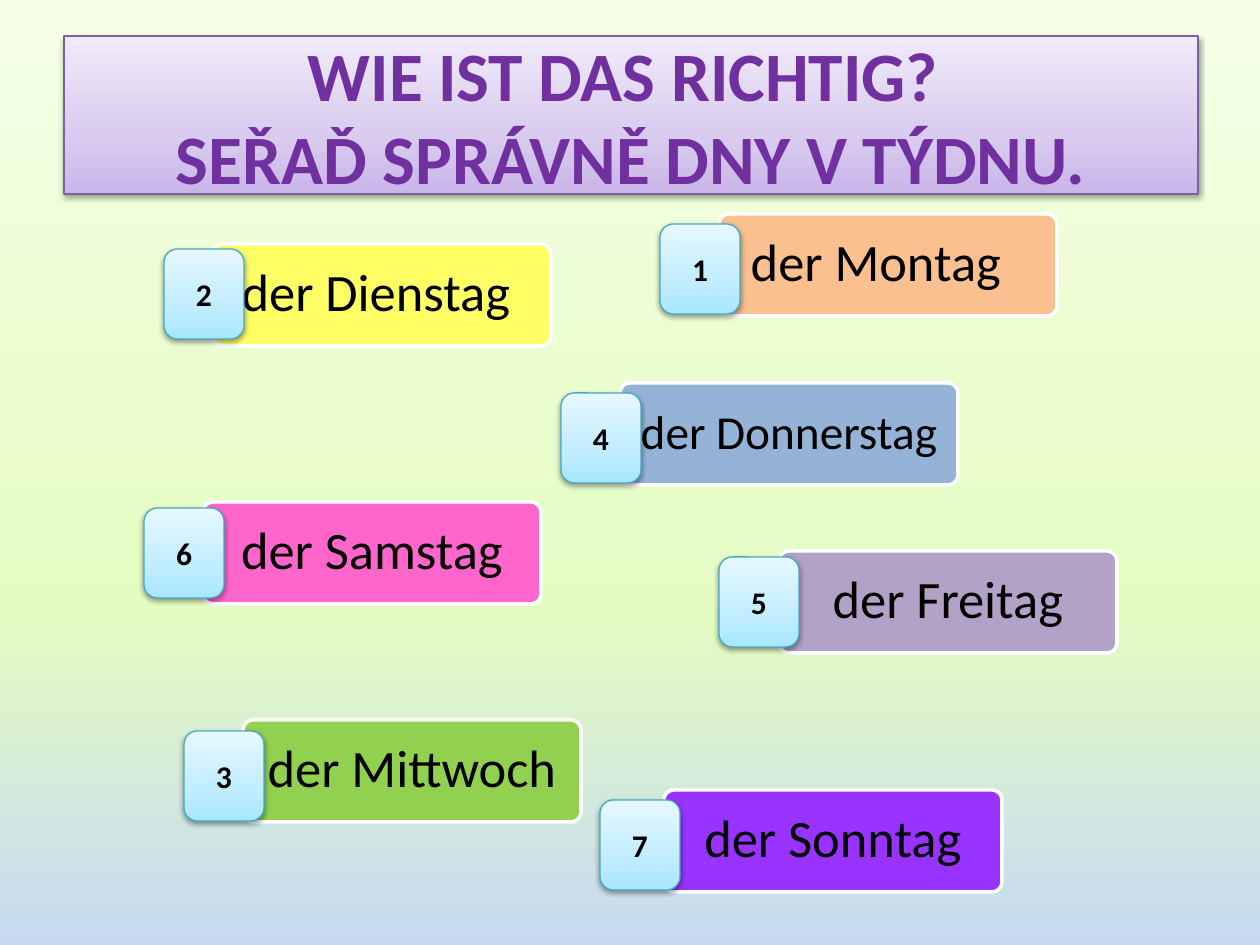
from dataclasses import dataclass

from lxml.etree import SubElement
from pptx import Presentation
from pptx.dml.color import RGBColor
from pptx.enum.shapes import MSO_SHAPE as Preset
from pptx.enum.text import MSO_ANCHOR as Anchor, MSO_AUTO_SIZE as AutoSize, PP_ALIGN as Align
from pptx.oxml.ns import qn
from pptx.util import Emu, Pt

PX = 914400 / 126
FONT = "Calibri"
COLOURS = {
    "title": "7030A0", "title line": "7D60A0", "badge line": "46AAC5",
    "text": "000000", "card line": "FFFFFF", "shadow": "000000",
    "Montag": "FAC090", "Dienstag": "FFFF66", "Mittwoch": "92D050",
    "Donnerstag": "95B3D7", "Freitag": "B3A2C7", "Samstag": "FF66CC",
    "Sonntag": "9933FF",
}
# Stops run from the bottom edge to the top edge.
GRADIENTS = {
    "background": {0: "C6D9F1", 35: "E4FCC2", 100: "F5FFE7"},
    "title": {0: "C9B5E8", 35: "D8CBEE", 100: "F0EAF9"},
    "badge": {0: "A7E6FF", 35: "C1EDFF", 100: "E7F8FF"},
}
CARD_SIZE = (338, 102)
BADGE_SIZE = (80, 90)
CARD_INSET = 15


@dataclass(frozen=True)
class Day:
    name: str
    number: int
    card: tuple[int, int]
    badge: tuple[int, int]
    size: int = 30
    shift: int = 0  # extra right inset, moves the centred text left


DAYS = [
    Day("Montag", 1, (719, 214), (660, 224), shift=24),
    Day("Dienstag", 2, (213, 244), (164, 249), shift=12),
    Day("Mittwoch", 3, (243, 720), (184, 731)),
    Day("Donnerstag", 4, (620, 383), (561, 393), size=27),
    Day("Freitag", 5, (779, 551), (719, 557)),
    Day("Samstag", 6, (203, 502), (144, 508)),
    Day("Sonntag", 7, (664, 790), (600, 800)),
]


def px(length: float) -> Emu:
    return Emu(round(length * PX))


def rgb(key: str) -> RGBColor:
    return RGBColor.from_string(COLOURS[key])


def apply_gradient(owner, fill, key: str) -> None:
    """Give the slide or shape that owns the fill a three-stop vertical gradient."""
    fill.gradient()
    fill.gradient_angle = 90
    stops = next(owner.element.iter(qn("a:gsLst")))
    stops.clear()
    for percent, colour in GRADIENTS[key].items():
        stop = SubElement(stops, qn("a:gs"), pos=str(percent * 1000))
        SubElement(stop, qn("a:srgbClr"), val=colour)


def outline(shape, key: str, width: float) -> None:
    shape.line.color.rgb = rgb(key)
    shape.line.width = Pt(width)


def raise_panel(shape, key: str) -> None:
    """Style a shape as a gradient panel with a soft shadow below."""
    apply_gradient(shape, shape.fill, key)
    outline(shape, f"{key} line", 0.75)
    shape.shadow.inherit = False
    effects = next(shape.element.iter(qn("a:effectLst")))
    shadow = SubElement(effects, qn("a:outerShdw"), blurRad="40000", dist="20000",
                        dir="5400000", rotWithShape="0")
    colour = SubElement(shadow, qn("a:srgbClr"), val=COLOURS["shadow"])
    SubElement(colour, qn("a:alpha"), val="38000")


def write(shape, text: str, size: float, colour: str = "text", bold: bool = False) -> None:
    frame = shape.text_frame
    frame.text = text
    frame.word_wrap = True
    frame.auto_size = AutoSize.NONE
    frame.vertical_anchor = Anchor.MIDDLE
    paragraph = frame.paragraphs[0]
    paragraph.alignment = Align.CENTER
    for run in paragraph.runs:
        for name, value in {"name": FONT, "size": Pt(size), "bold": bold}.items():
            setattr(run.font, name, value)
        run.font.color.rgb = rgb(colour)


def add_card(slide, day: Day) -> None:
    card = slide.shapes.add_shape(Preset.ROUNDED_RECTANGLE, *map(px, day.card + CARD_SIZE))
    card.adjustments[0] = 0.1
    card.shadow.inherit = False
    card.fill.solid()
    card.fill.fore_color.rgb = rgb(day.name)
    outline(card, "card line", 2)
    write(card, f"der {day.name}", day.size)
    card.text_frame.paragraphs[0].line_spacing = 0.9
    insets = {"margin_left": CARD_INSET, "margin_right": CARD_INSET + day.shift,
              "margin_top": 8, "margin_bottom": 8}
    for name, value in insets.items():
        setattr(card.text_frame, name, px(value))


def add_badge(slide, day: Day) -> None:
    badge = slide.shapes.add_shape(Preset.FLOWCHART_ALTERNATE_PROCESS,
                                   *map(px, day.badge + BADGE_SIZE))
    raise_panel(badge, "badge")
    write(badge, str(day.number), 18, bold=True)


def add_title(slide) -> None:
    title = slide.shapes.title
    place = {"left": 64, "top": 36, "width": 1134, "height": 158}
    for name, value in place.items():
        setattr(title, name, px(value))
    raise_panel(title, "title")
    write(title, "WIE IST DAS RICHTIG? \vSEŘAĎ SPRÁVNĚ DNY V TÝDNU.", 39.6, "title", bold=True)


def main() -> None:
    deck = Presentation()
    deck.slide_width, deck.slide_height = px(1260), px(945)
    slide = deck.slides.add_slide(deck.slide_layouts.get_by_name("Title Only"))
    apply_gradient(slide, slide.background.fill, "background")
    add_title(slide)
    for draw in (add_card, add_badge):
        for day in DAYS:
            draw(slide, day)
    deck.save("out.pptx")


if __name__ == "__main__":
    main()
